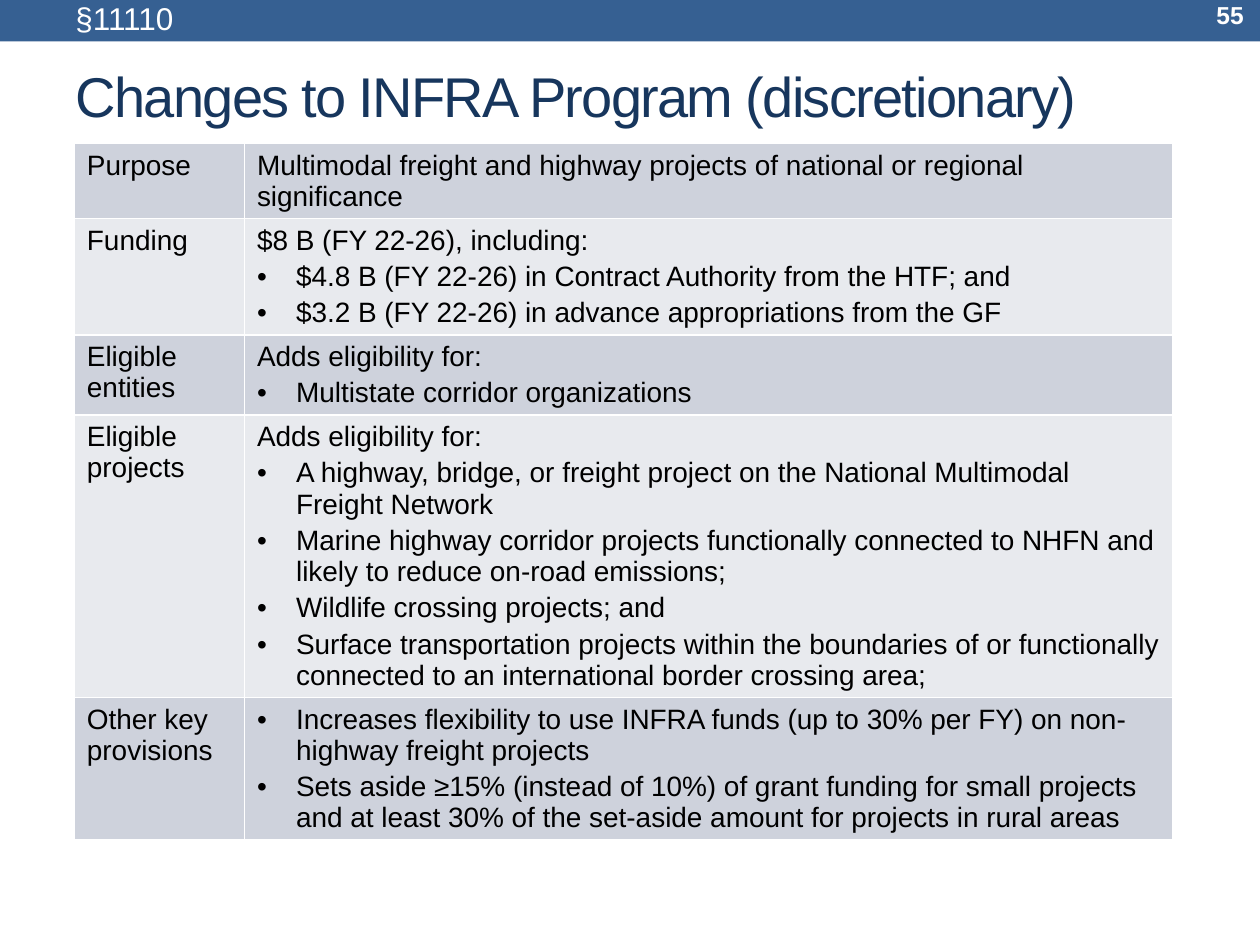
from pptx import Presentation
from pptx.dml.color import RGBColor
from pptx.enum.shapes import MSO_SHAPE
from pptx.enum.text import MSO_ANCHOR, PP_ALIGN
from pptx.oxml.ns import qn
from pptx.util import Inches, Pt
from lxml import etree

RECTANGLE = MSO_SHAPE.RECTANGLE
TOP, MIDDLE = MSO_ANCHOR.TOP, MSO_ANCHOR.MIDDLE
LEFT, RIGHT = PP_ALIGN.LEFT, PP_ALIGN.RIGHT

BLUE = RGBColor(0x36, 0x60, 0x92)
NAVY = RGBColor(0x17, 0x36, 0x5D)
WHITE = RGBColor(0xFF, 0xFF, 0xFF)
BLACK = RGBColor(0x00, 0x00, 0x00)
ROW_FILLS = (RGBColor(0xCE, 0xD2, 0xDC), RGBColor(0xE8, 0xEA, 0xEE))

COLUMN_WIDTHS = (1.35, 7.37)
BULLET_INDENT = 0.31
BULLET = "• "

# Each row: height, label, paragraphs; a leading BULLET marks a list item.
PROGRAM_ROWS = [
    (0.59, "Purpose", [
        "Multimodal freight and highway projects of national or regional significance"]),
    (0.92, "Funding", [
        "$8 B (FY 22-26), including:",
        "• $4.8 B (FY 22-26) in Contract Authority from the HTF; and",
        "• $3.2 B (FY 22-26) in advance appropriations from the GF"]),
    (0.63, "Eligible entities", [
        "Adds eligibility for:",
        "• Multistate corridor organizations"]),
    (2.24, "Eligible projects", [
        "Adds eligibility for:",
        "• A highway, bridge, or freight project on the National Multimodal "
        "Freight Network",
        "• Marine highway corridor projects functionally connected to NHFN and "
        "likely to reduce on-road emissions;",
        "• Wildlife crossing projects; and",
        "• Surface transportation projects within the boundaries of or functionally "
        "connected to an international border crossing area;"]),
    (1.13, "Other key provisions", [
        "• Increases flexibility to use INFRA funds (up to 30% per FY) on "
        "non-highway freight projects",
        "• Sets aside ≥15% (instead of 10%) of grant funding for small projects "
        "and at least 30% of the set-aside amount for projects in rural areas"]),
]


def box(left, top, width, height):
    return {"left": Inches(left), "top": Inches(top),
            "width": Inches(width), "height": Inches(height)}


def apply(target, values):
    for name, value in values.items():
        setattr(target, name, value)


class SlideBuilder:
    def __init__(self, slide, font="Arial"):
        self.slide = slide
        self.font = font

    def add_text(self, paragraph, text, size, color, bold=False, align=LEFT):
        paragraph.alignment = align
        run = paragraph.add_run()
        run.text = text
        apply(run.font, {"name": self.font, "size": Pt(size), "bold": bold})
        run.font.color.rgb = color
        return run

    def bar(self, area, color):
        bar = self.slide.shapes.add_shape(RECTANGLE, **area)
        bar.shadow.inherit = False
        bar.fill.solid()
        bar.fill.fore_color.rgb = color
        bar.line.fill.background()

    def title(self, text, area):
        title = self.slide.shapes.title
        apply(title, area)
        apply(title.text_frame, {"vertical_anchor": MIDDLE, "word_wrap": True})
        run = self.add_text(title.text_frame.paragraphs[0], text, 32, NAVY)
        run._r.get_or_add_rPr().set("spc", "-100")

    def label(self, text, area, size, anchor=TOP, **style):
        frame = self.slide.shapes.add_textbox(**area).text_frame
        apply(frame, {"word_wrap": True, "vertical_anchor": anchor})
        self.add_text(frame.paragraphs[0], text, size, WHITE, **style)

    def table(self, rows, left, top):
        area = box(left, top, sum(COLUMN_WIDTHS), sum(row[0] for row in rows))
        table = self.slide.shapes.add_table(len(rows), len(COLUMN_WIDTHS), **area).table
        apply(table, {"first_row": False, "horz_banding": False})
        for column, width in zip(table.columns, COLUMN_WIDTHS):
            column.width = Inches(width)
        for index, (height, heading, details) in enumerate(rows):
            table.rows[index].height = Inches(height)
            fill = ROW_FILLS[index % 2]
            self.cell(table.cell(index, 0), [heading], fill, 0)
            self.cell(table.cell(index, 1), details, fill, 3)

    def cell(self, cell, lines, fill, space_after):
        cell.fill.solid()
        cell.fill.fore_color.rgb = fill
        self.borders(cell)
        frame = cell.text_frame
        for index, line in enumerate(lines):
            paragraph = frame.add_paragraph() if index else frame.paragraphs[0]
            paragraph.space_after = Pt(space_after)
            self.add_text(paragraph, line.removeprefix(BULLET), 16, BLACK)
            if line.startswith(BULLET):
                self.bullet(paragraph)

    def bullet(self, paragraph):
        properties = paragraph._p.get_or_add_pPr()
        indent = Inches(BULLET_INDENT)
        properties.set("marL", str(indent))
        properties.set("indent", str(-indent))
        etree.SubElement(properties, qn("a:buFont"), typeface=self.font)
        etree.SubElement(properties, qn("a:buChar"), char=BULLET.strip())

    def borders(self, cell):
        properties = cell._tc.get_or_add_tcPr()
        for position, side in enumerate(("a:lnL", "a:lnR", "a:lnT", "a:lnB")):
            line = etree.Element(qn(side), w=str(Pt(1)))
            solid = etree.SubElement(line, qn("a:solidFill"))
            etree.SubElement(solid, qn("a:srgbClr"), val=str(WHITE))
            properties.insert(position, line)


def main():
    deck = Presentation()
    apply(deck, {"slide_width": Inches(10), "slide_height": Inches(7.5)})
    title_only = deck.slide_layouts[5]
    page = SlideBuilder(deck.slides.add_slide(title_only))
    page.bar(box(0, -0.07, 10, 0.4), BLUE)
    page.title("Changes to INFRA Program (discretionary)", box(0.5, 0.27, 9, 0.97))
    page.table(PROGRAM_ROWS, 0.59, 1.14)
    page.label("§11110", box(0.5, -0.06, 8.34, 0.4), 18)
    page.label("55", box(8.8, -0.06, 1.17, 0.36), 14, MIDDLE, bold=True, align=RIGHT)
    deck.save("out.pptx")


if __name__ == "__main__":
    main()
